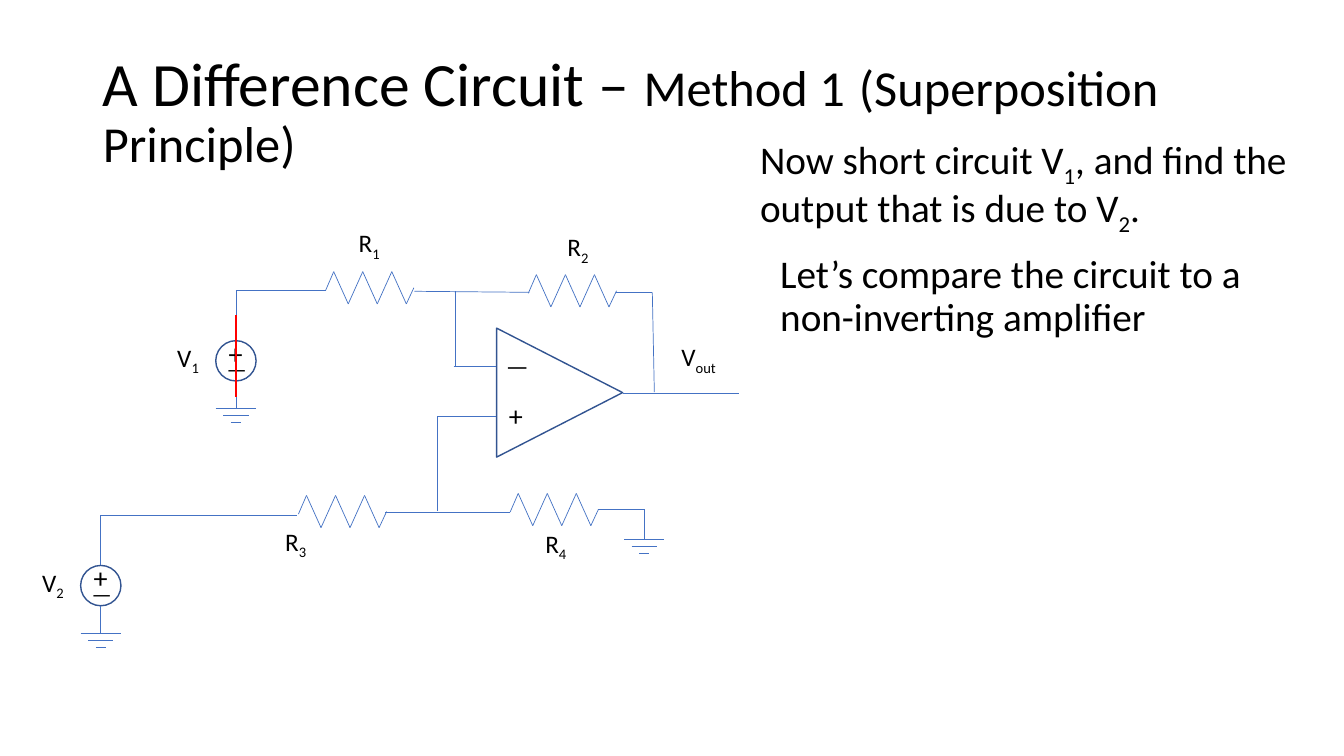
import dataclasses
import itertools

import pptx
import pptx.dml.color
import pptx.enum.shapes
import pptx.enum.text
import pptx.oxml
import pptx.oxml.ns
import pptx.util

SHAPE = pptx.enum.shapes.MSO_SHAPE


@dataclasses.dataclass(frozen=True)
class Theme:
    font: str = "Calibri"
    text: str = "000000"
    wire: str = "4472C4"
    outline: str = "325491"
    short: str = "FF0000"
    title_size: float = 44
    subtitle_size: float = 36
    body_size: float = 28
    label_size: float = 18
    plus_size: float = 20
    minus_size: float = 16
    wire_width: float = 0.5
    outline_width: float = 1
    short_width: float = 1.75


@dataclasses.dataclass(frozen=True)
class Grid:
    """A region of the slide whose columns and rows are 0.1 inch apart."""
    left: float
    top: float
    width: float
    height: float
    cell: float = 0.1

    def at(self, col, row):
        return (pptx.util.Inches(self.left + col * self.cell),
                pptx.util.Inches(self.top + row * self.cell))

    def frame(self, col, row, cols, rows):
        return (*self.at(col, row), pptx.util.Inches(cols * self.cell),
                pptx.util.Inches(rows * self.cell))

    def whole(self):
        return self.frame(0, 0, self.width / self.cell, self.height / self.cell)


THEME = Theme()
SLIDE_W, SLIDE_H = 13.33, 7.5
TITLE = Grid(0.92, 0.4, 11.5, 1.45)
CIRCUIT = Grid(0.3, 2.2, 7.1, 4.3)
TASK = Grid(7.44, 1.3, 5.94, 0.95)
HINT = Grid(7.64, 2.48, 5.48, 1.46)


def rgb(code):
    return pptx.dml.color.RGBColor.from_string(code)


def format_run(r, size):
    r.font.name = THEME.font
    r.font.size = pptx.util.Pt(size)
    r.font.color.rgb = rgb(THEME.text)


def add_text(s, frame, text, size):
    """Add a text box; parts of the text between underscores are subscripts."""
    tf = s.shapes.add_textbox(*frame).text_frame
    tf.word_wrap = True
    p = tf.paragraphs[0]
    for i, part in enumerate(text.split("_")):
        if part:
            r = p.add_run()
            r.text = part
            format_run(r, size)
            if i % 2:
                r._r.get_or_add_rPr().set("baseline", "-25000")
    return p


def add_path(s, grid, points, color=THEME.wire, width=THEME.wire_width):
    """Join the grid points by straight lines."""
    for start, end in itertools.pairwise(points):
        line = s.shapes.add_connector(pptx.enum.shapes.MSO_CONNECTOR.STRAIGHT,
                                      *grid.at(*start), *grid.at(*end))
        line.line.color.rgb = rgb(color)
        line.line.width = pptx.util.Pt(width)
        line._element.spPr.append(pptx.oxml.parse_xml(
            f'<a:effectLst {pptx.oxml.ns.nsdecls("a")}/>'))


def add_outline(s, kind, frame):
    sp = s.shapes.add_shape(kind, *frame)
    sp.shadow.inherit = False
    sp.fill.background()
    sp.line.color.rgb = rgb(THEME.outline)
    sp.line.width = pptx.util.Pt(THEME.outline_width)
    return sp


def add_label(s, grid, col, row, text):
    add_text(s, grid.frame(col, row, 5.7, 4), text, THEME.label_size)


def add_resistor(s, grid, col, row):
    peaks = [(col + 0.8 + 1.44 * i, row + (1.35 if i % 2 else -1.85))
             for i in range(6)]
    add_path(s, grid, [(col, row), *peaks, (col + 8.75, row - 0.25)])


def add_ground(s, grid, col, row):
    for i, half in enumerate((2, 1.25, 0.5)):
        y = row + 0.7 * i
        add_path(s, grid, [(col - half, y), (col + half, y)])


def add_source(s, grid, col, row, name):
    """Draw a grounded voltage source centred on the grid point."""
    add_text(s, grid.frame(col - 1.7, row - 2.95, 3.4, 4.4), "+", THEME.plus_size)
    add_outline(s, SHAPE.OVAL, grid.frame(col - 2, row - 2, 4, 4))
    add_path(s, grid, [(col, row - 7), (col, row - 2)])
    add_path(s, grid, [(col, row + 2), (col, row + 4.7)])
    add_ground(s, grid, col, row + 4.7)
    add_label(s, grid, col - 6.8, row - 2.35, name)
    add_text(s, grid.frame(col - 1.9, row - 1.05, 3.4, 3.7), "—", THEME.minus_size)


def add_amplifier(s, grid, col, row):
    """Draw the amplifier with its tip pointing right, from its frame's corner."""
    add_outline(s, SHAPE.ISOSCELES_TRIANGLE,
                grid.frame(col, row, 12.8, 12.5)).rotation = 90
    add_text(s, grid.frame(col + 0.1, row + 1.6, 3.4, 4), "—", THEME.label_size)
    add_text(s, grid.frame(col + 0.4, row + 6.3, 3.4, 4.4), "+", THEME.plus_size)


def add_circuit(s, grid):
    add_amplifier(s, grid, 46.1, 10.7)
    for col, row in ((29.3, 6.8), (49.4, 7.1), (26.6, 29), (47.6, 28.8)):
        add_resistor(s, grid, col, row)
    for col, row, name in ((31.6, 0.1, "R_1_"), (52.3, 0.5, "R_2_"),
                           (24.3, 29.7, "R_3_"), (50.1, 29.9, "R_4_"),
                           (63.6, 11.4, "V_out_")):
        add_label(s, grid, col, row, name)
    add_source(s, grid, 20.4, 13.8, "V_1_")
    add_source(s, grid, 7, 36.1, "V_2_")
    add_ground(s, grid, 60.9, 31.5)
    wires = (
        [(20.4, 6.8), (29.3, 6.8)],
        [(38.1, 6.9), (49.5, 7)],
        [(42.2, 6.9), (42.2, 14.3)],
        [(42, 14.3), (46.2, 14.3)],
        [(58.1, 7), (61.7, 7), (61.9, 16.9)],
        [(58.8, 17), (70.3, 17)],
        [(46.2, 19.3), (40.4, 19.3), (40.4, 28.7)],
        [(7, 29.1), (26.5, 29.1)],
        [(35.2, 28.8), (47.6, 28.8)],
        [(56.3, 28.5), (60.9, 28.5), (60.9, 31.5)],
    )
    for wire in wires:
        add_path(s, grid, wire)
    add_path(s, grid, [(20.4, 9.3), (20.4, 17.4)], THEME.short, THEME.short_width)


def add_title(s, grid):
    title = s.shapes.title
    title.left, title.top, title.width, title.height = grid.whole()
    tf = title.text_frame
    tf.word_wrap = True
    tf.auto_size = pptx.enum.text.MSO_AUTO_SIZE.NONE
    tf.vertical_anchor = pptx.enum.text.MSO_ANCHOR.MIDDLE
    p = tf.paragraphs[0]
    p.alignment = pptx.enum.text.PP_ALIGN.LEFT
    p.line_spacing = 0.9
    for text, size in (("A Difference Circuit – ", THEME.title_size),
                       ("Method 1", THEME.subtitle_size),
                       (" ", THEME.title_size),
                       ("(Superposition Principle)", THEME.subtitle_size)):
        r = p.add_run()
        r.text = text
        format_run(r, size)


def add_statement(s, grid, text):
    p = add_text(s, grid.whole(), text, THEME.body_size)
    p.line_spacing = 0.9
    p.space_before = pptx.util.Pt(10)


def main():
    prs = pptx.Presentation()
    prs.slide_width = pptx.util.Inches(SLIDE_W)
    prs.slide_height = pptx.util.Inches(SLIDE_H)
    s = prs.slides.add_slide(prs.slide_layouts.get_by_name("Title Only"))
    add_title(s, TITLE)
    add_circuit(s, CIRCUIT)
    add_statement(s, TASK, "Now short circuit V_1_, and find the output "
                           "that is due to V_2_.")
    add_statement(s, HINT, "Let’s compare the circuit to a non-inverting amplifier")
    prs.save("out.pptx")


if __name__ == "__main__":
    main()
